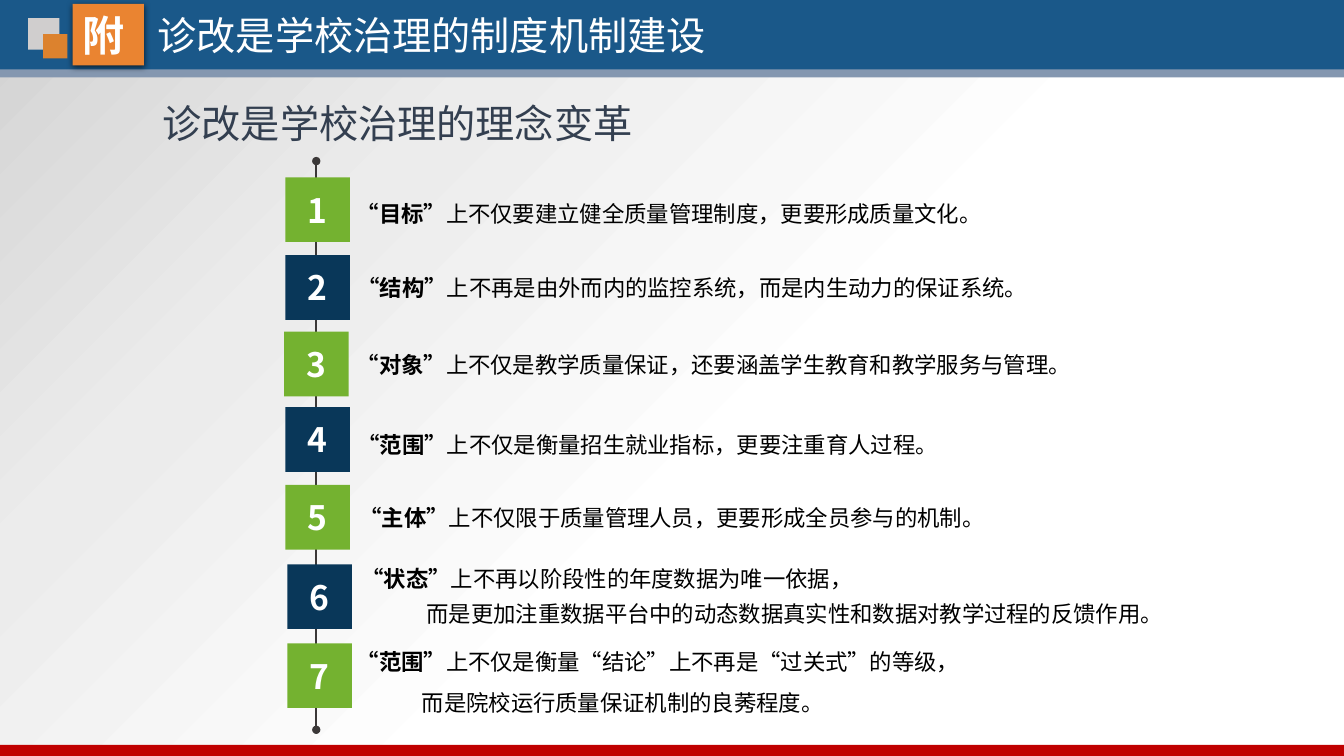
"""Build the slide on changing ideas in school governance."""
from copy import deepcopy

from lxml.etree import SubElement
from pptx import Presentation
from pptx.dml.color import RGBColor
from pptx.enum.shapes import MSO_CONNECTOR, MSO_SHAPE
from pptx.enum.text import MSO_ANCHOR, MSO_AUTO_SIZE, PP_ALIGN
from pptx.oxml.ns import qn
from pptx.util import Cm, Pt

FONT = "Noto Sans CJK SC"
WHITE = RGBColor(0xFF, 0xFF, 0xFF)
BLACK = RGBColor(0x00, 0x00, 0x00)
PALE_GREY = RGBColor(0xEC, 0xEC, 0xEC)
MID_GREY = RGBColor(0xD2, 0xD2, 0xD2)
SQUARE_GREY = RGBColor(0xD0, 0xCE, 0xCE)
SLATE = RGBColor(0x33, 0x3F, 0x50)
CHARCOAL = RGBColor(0x3B, 0x38, 0x38)
GREEN = RGBColor(0x74, 0xB2, 0x30)
NAVY = RGBColor(0x09, 0x37, 0x59)
BLUE = RGBColor(0x1A, 0x58, 0x89)
BLUE_GREY = RGBColor(0x84, 0x97, 0xB0)
DARK_ORANGE = RGBColor(0xDC, 0x82, 0x2E)
ORANGE = RGBColor(0xEA, 0x84, 0x31)
RED = RGBColor(0xC0, 0x00, 0x00)

WIDTH, HEIGHT = 33.87, 19.05
BADGE = 1.63

ROWS = [
    (7.19, 4.47, 8.74, 4.72, 16.41, 1.14, 1.3, "“目标”",
     ["上不仅要建立健全质量管理制度，更要形成质量文化。"]),
    (7.19, 6.43, 8.76, 6.58, 17.4, 1.14, 1.3, "“结构”",
     ["上不再是由外而内的监控系统，而是内生动力的保证系统。"]),
    (7.16, 8.36, 8.74, 8.53, 18.36, 1.14, 1.3, "“对象”",
     ["上不仅是教学质量保证，还要涵盖学生教育和教学服务与管理。"]),
    (7.19, 10.26, 8.76, 10.39, 15.42, 1.27, 1.5, "“范围”",
     ["上不仅是衡量招生就业指标，更要注重育人过程。"]),
    (7.19, 12.22, 8.81, 12.24, 16.46, 1.27, 1.5, "“主体”",
     ["上不仅限于质量管理人员，更要形成全员参与的机制。"]),
    (7.24, 14.22, 8.86, 13.92, 22.07, 2.03, 1.3, "“状态”",
     ["上不再以阶段性的年度数据为唯一依据，",
      "而是更加注重数据平台中的动态数据真实性和数据对教学过程的反馈作用。"]),
    (7.24, 16.21, 8.74, 15.88, 16.18, 2.31, 1.5, "“范围”",
     ["上不仅是衡量“结论”上不再是“过关式”的等级，",
      "而是院校运行质量保证机制的良莠程度。"]),
]


def add_block(left, top, width, height, color):
    block = page.shapes.add_shape(
        MSO_SHAPE.RECTANGLE, Cm(left), Cm(top), Cm(width), Cm(height))
    block.shadow.inherit = False
    block.fill.solid()
    block.fill.fore_color.rgb = color
    block.line.fill.background()
    return block


def style(para, size, color, align=PP_ALIGN.LEFT, bold=None):
    para.alignment = align
    para.font.size = Pt(size)
    para.font.bold = bold
    para.font.color.rgb = color
    para.font.name = FONT
    defaults = para.font._element
    SubElement(defaults, qn("a:ea")).set("typeface", FONT)


deck = Presentation()
deck.slide_width, deck.slide_height = Cm(WIDTH), Cm(HEIGHT)
page = deck.slides.add_slide(deck.slide_layouts[5])

backdrop = add_block(0, 0, WIDTH, HEIGHT, WHITE)
backdrop.fill.gradient()
backdrop.fill.gradient_angle = 315
stop_list = backdrop._element.spPr.find(qn("a:gradFill")).find(qn("a:gsLst"))
stop_list.append(deepcopy(stop_list[-1]))
for stop, position, color in zip(backdrop.fill.gradient_stops, (0, 0.27, 0.57),
                                 (MID_GREY, PALE_GREY, WHITE)):
    stop.position = position
    stop.color.rgb = color

heading = page.shapes.add_textbox(Cm(2.72), Cm(2.39), Cm(14.6), Cm(1.65))
heading.text_frame.word_wrap = True
heading.text_frame.text = "诊改是学校治理的理念变革"
style(heading.text_frame.paragraphs[0], 28, SLATE, PP_ALIGN.CENTER)

spine = page.shapes.add_connector(
    MSO_CONNECTOR.STRAIGHT, Cm(7.97), Cm(4.06), Cm(7.97), Cm(18.39))
spine.line.color.rgb = CHARCOAL
spine.line.width = Pt(1.75)
for end in ("a:headEnd", "a:tailEnd"):
    SubElement(spine.line._get_or_add_ln(), qn(end)).set("type", "oval")
SubElement(spine._element.spPr, qn("a:effectLst"))

for number, row in enumerate(ROWS, 1):
    badge_left, badge_top, left, top, width, height, spacing, topic, lines = row
    badge = add_block(badge_left, badge_top, BADGE, BADGE,
                      GREEN if number % 2 else NAVY)
    badge.text_frame.vertical_anchor = MSO_ANCHOR.MIDDLE
    badge.text_frame.text = str(number)
    style(badge.text_frame.paragraphs[0], 24, WHITE, PP_ALIGN.CENTER, True)

    box = page.shapes.add_textbox(Cm(left), Cm(top), Cm(width), Cm(height))
    frame = box.text_frame
    frame.word_wrap = True
    for index, line in enumerate(lines):
        para = frame.add_paragraph() if index else frame.paragraphs[0]
        para.line_spacing = spacing
        style(para, 16, BLACK)
        if index:
            para._p.get_or_add_pPr().set("marL", str(Cm(1.64)))
        else:
            span = para.add_run()
            span.text = topic
            span.font.bold = True
        para.add_run().text = line

add_block(0, 0, WIDTH, 1.93, BLUE)
add_block(0, 1.75, WIDTH, 0.2, BLUE_GREY)
add_block(0.71, 0.46, 0.79, 0.79, SQUARE_GREY)
add_block(1.09, 0.86, 0.61, 0.61, DARK_ORANGE)

title = page.shapes.title
title.left, title.top, title.width, title.height = Cm(3.58), Cm(0.15), Cm(14.6), Cm(1.65)
title.text_frame.word_wrap = True
title.text_frame.auto_size = MSO_AUTO_SIZE.NONE
title.text_frame.vertical_anchor = MSO_ANCHOR.TOP
title.text_frame.text = "诊改是学校治理的制度机制建设"
style(title.text_frame.paragraphs[0], 28, WHITE, PP_ALIGN.CENTER)
title._element.getparent().append(title._element)

tag = add_block(1.83, 0.1, 1.8, 1.55, ORANGE)
tag.text_frame.vertical_anchor = MSO_ANCHOR.MIDDLE
tag.text_frame.text = "附"
style(tag.text_frame.paragraphs[0], 30, WHITE, bold=True)
shadow = SubElement(tag._element.spPr.find(qn("a:effectLst")), qn("a:outerShdw"),
                    blurRad=str(Pt(4.5)), dist=str(Pt(1.5)), dir="5400000")
shade = SubElement(shadow, qn("a:srgbClr"), val=str(BLACK))
SubElement(shade, qn("a:alpha"), val="63000")

add_block(0, 18.77, WIDTH, 0.28, RED)

deck.save("out.pptx")
